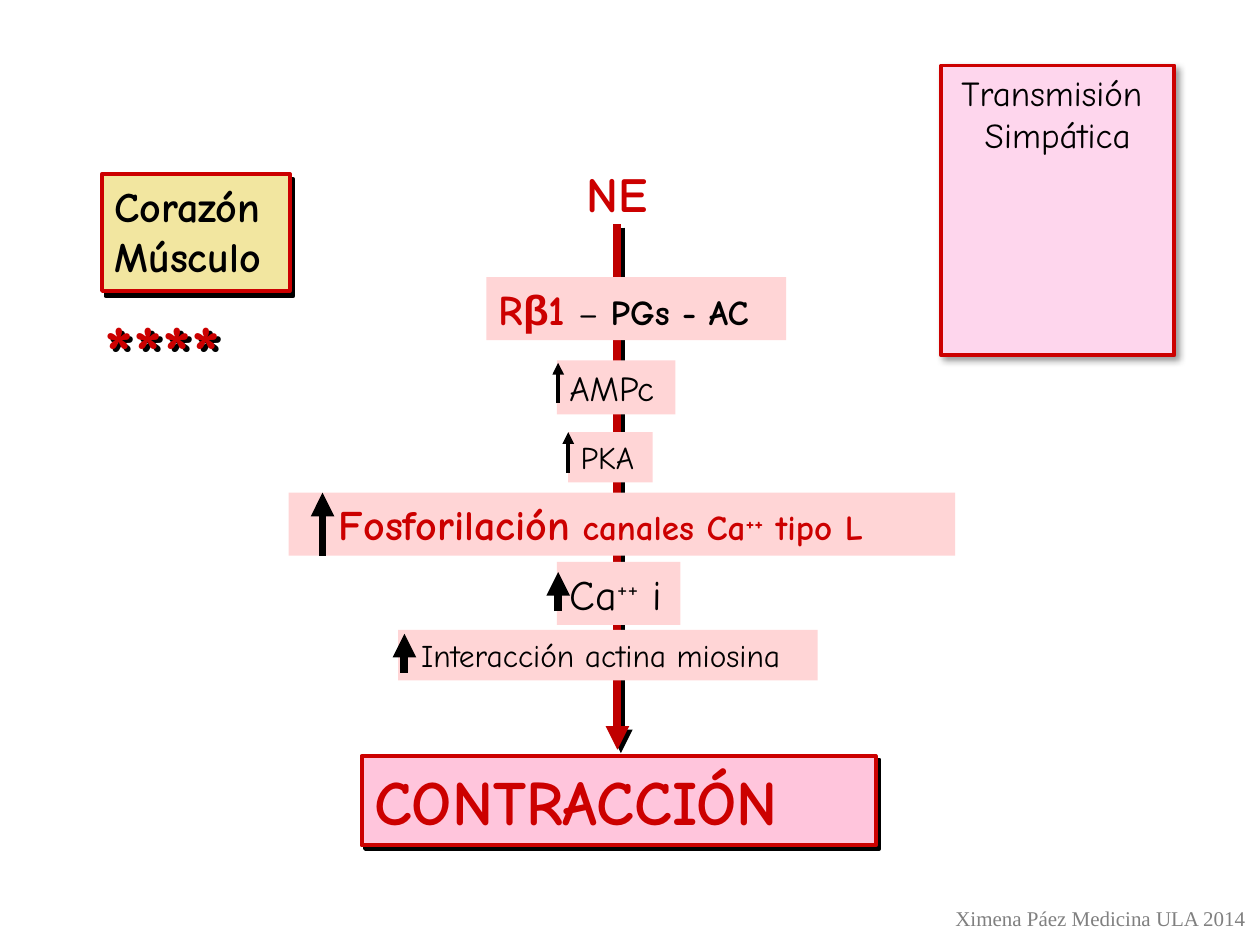
from typing import NamedTuple, Optional

from lxml import etree
from pptx import Presentation
from pptx.dml.color import RGBColor
from pptx.enum import shapes, text
from pptx.oxml.ns import qn
from pptx.util import Inches, Pt

FONT = "Comic Neue"
RED, DARK_RED, BLACK, GREY = "CC0000", "C00000", "000000", "808080"
STEP_FILL = "FFD5D6"


class Run(NamedTuple):
    words: str
    size: float
    color: str = BLACK
    bold: bool = False
    font: str = FONT
    raised: bool = False


class Shadow(NamedTuple):
    distance: float
    angle: int
    opacity: int = 100
    blur: float = 0


class Step(NamedTuple):
    left: float
    top: float
    width: float
    height: float
    runs: list[Run]
    indent: float = 0


class Rise(NamedTuple):
    x: float
    top: float
    bottom: float
    weight: float


def rgb(value: str) -> RGBColor:
    return RGBColor.from_string(value)


def add_effects(shape, shadow: Optional[Shadow] = None) -> None:
    """Give the shape its own effect list, with or without a shadow."""
    properties = shape._element.spPr
    for old in properties.findall(qn("a:effectLst")):
        properties.remove(old)
    effects = etree.SubElement(properties, qn("a:effectLst"))
    if shadow:
        outer = etree.SubElement(
            effects, qn("a:outerShdw"), blurRad=str(Pt(shadow.blur)),
            dist=str(Pt(shadow.distance)), dir=str(shadow.angle * 60000),
            algn="ctr", rotWithShape="0")
        color = etree.SubElement(outer, qn("a:srgbClr"), val=BLACK)
        etree.SubElement(color, qn("a:alpha"), val=str(shadow.opacity * 1000))


def write(slide, paragraphs: list[list[Run]], left: float, top: float,
          width: float, height: float, *, holder=None,
          fill: Optional[str] = None, line: Optional[str] = None,
          shadow: Optional[Shadow] = None, align=text.PP_ALIGN.LEFT,
          indent: float = 0, wrap: bool = False) -> None:
    place = [Inches(n) for n in (left, top, width, height)]
    box = holder or slide.shapes.add_textbox(*place)
    box.left, box.top, box.width, box.height = place
    if fill:
        box.fill.solid()
        box.fill.fore_color.rgb = rgb(fill)
    if line:
        box.line.color.rgb = rgb(line)
        box.line.width = Pt(2.25)
    add_effects(box, shadow)

    frame = box.text_frame
    frame.word_wrap = wrap
    frame.auto_size = text.MSO_AUTO_SIZE.SHAPE_TO_FIT_TEXT
    frame.vertical_anchor = text.MSO_ANCHOR.TOP
    frame.margin_left = Inches(0.1 + indent)
    for number, runs in enumerate(paragraphs):
        paragraph = frame.add_paragraph() if number else frame.paragraphs[0]
        paragraph.alignment = align
        for part in runs:
            run = paragraph.add_run()
            run.text = part.words
            run.font.size = Pt(part.size)
            run.font.bold = part.bold
            run.font.name = part.font
            run.font.color.rgb = rgb(part.color)
            if part.raised:
                run.font._element.set("baseline", "30000")


def add_arrow(slide, x: float, start: float, end: float, color: str,
              weight: float, shadow: Optional[Shadow] = None) -> None:
    arrow = slide.shapes.add_connector(
        shapes.MSO_CONNECTOR.STRAIGHT,
        Inches(x), Inches(start), Inches(x), Inches(end))
    arrow.line.color.rgb = rgb(color)
    arrow.line.width = Pt(weight)
    etree.SubElement(arrow.line._get_or_add_ln(), qn("a:tailEnd"), type="triangle")
    add_effects(arrow, shadow)


STEPS = [
    Step(3.86, 2.2, 2.38, 0.5, [
        Run("R", 24, RED, True), Run("β", 24, RED, True, "Arial"),
        Run("1", 24, RED, True), Run(" ", 20, RED, True),
        Run("– ", 20), Run("PGs - AC", 20, bold=True)]),
    Step(4.42, 2.86, 0.94, 0.43, [Run("AMPc", 20)]),
    Step(4.51, 3.43, 0.67, 0.4, [Run("PKA", 18)]),
    Step(2.29, 3.91, 5.29, 0.5, [
        Run("Fosforilación", 24, RED, True), Run(" canales Ca", 20, RED, True),
        Run("++", 20, RED, True, raised=True), Run(" tipo L", 20, RED, True)],
        indent=0.3),
    Step(4.42, 4.46, 0.98, 0.5, [
        Run("Ca", 24), Run("++", 24, raised=True), Run(" i", 24)]),
    Step(3.16, 5, 3.33, 0.4, [Run(" Interacción actina miosina", 18)]),
]

RISES = [
    Rise(4.43, 2.88, 3.2, 2.25),
    Rise(4.51, 3.43, 3.75, 2.25),
    Rise(2.56, 3.91, 4.41, 4.5),
    Rise(4.43, 4.54, 4.85, 4.5),
    Rise(3.21, 5.03, 5.34, 4.5),
]


def main() -> None:
    deck = Presentation()
    deck.slide_width, deck.slide_height = Inches(10), Inches(7.5)
    slide = deck.slides.add_slide(deck.slide_layouts[5])
    hard_shadow = Shadow(2.8, 45)

    # Topic and organ
    write(slide, [[Run("Transmisión ", 20)], [Run("Simpática", 20)]],
          7.47, 0.52, 1.85, 0.77, holder=slide.shapes.title, fill="FED6ED",
          line=RED, shadow=Shadow(3, 45, 40, 4), align=text.PP_ALIGN.CENTER)
    write(slide, [[Run("Corazón", 24, bold=True)], [Run("Músculo", 24, bold=True)]],
          0.81, 1.38, 1.49, 0.93, fill="F2E6A0", line=RED, shadow=Shadow(3.6, 56))
    write(slide, [[Run("****", 44, RED, True)]], 0.73, 2.36, 1.58, 0.84,
          shadow=hard_shadow, wrap=True)

    # Signalling cascade, from NE down to the contraction
    add_arrow(slide, 4.9, 1.78, 5.95, DARK_RED, 4.5, hard_shadow)
    write(slide, [[Run("NE", 28, RED, True)]], 4.56, 1.25, 0.76, 0.57)
    for step in STEPS:
        write(slide, [step.runs], step.left, step.top, step.width, step.height,
              fill=STEP_FILL, indent=step.indent)
    write(slide, [[Run("CONTRACCIÓN", 36, RED, True)]], 2.87, 6, 4.08, 0.71,
          fill="FFC5DC", line=RED, shadow=hard_shadow)

    # Increase marks
    for rise in RISES:
        add_arrow(slide, rise.x, rise.bottom, rise.top, BLACK, rise.weight)

    # Credit
    write(slide, [[Run("Ximena Páez Medicina ULA 2014", 12, GREY,
                       font="Times New Roman")]],
          7.47, 7.14, 2.53, 0.3, align=text.PP_ALIGN.CENTER)

    deck.save("out.pptx")


if __name__ == "__main__":
    main()
